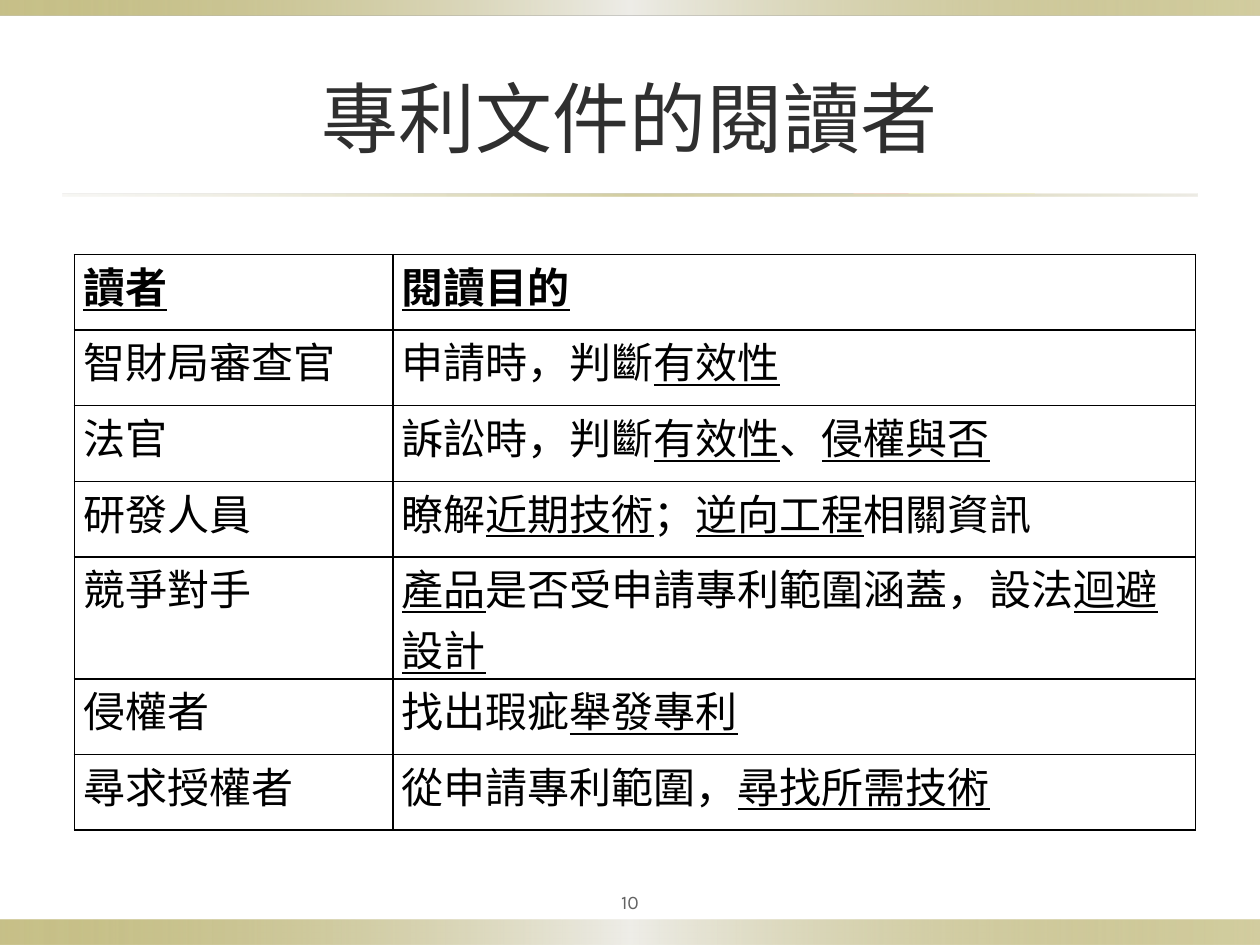
import pptx
import pptx.dml.color
import pptx.enum.shapes
import pptx.enum.text
import pptx.oxml.ns
import pptx.util
from lxml import etree

RGBColor = pptx.dml.color.RGBColor
Inches = pptx.util.Inches
Pt = pptx.util.Pt
qn = pptx.oxml.ns.qn
CENTER = pptx.enum.text.PP_ALIGN.CENTER
MIDDLE = pptx.enum.text.MSO_ANCHOR.MIDDLE

# Content: each cell is a list of pieces; a piece in a tuple is underlined
TITLE = "專利文件的閱讀者"
PAGE_NUMBER = "10"
ROWS = [
    ([("讀者",)], [("閱讀目的",)]),
    (["智財局審查官"], ["申請時，判斷", ("有效性",)]),
    (["法官"], ["訴訟時，判斷", ("有效性",), "、", ("侵權與否",)]),
    (["研發人員"], ["瞭解", ("近期技術",), "；", ("逆向工程",), "相關資訊"]),
    (["競爭對手"], [("產品",), "是否受申請專利範圍涵蓋，設法", ("迴避設計",)]),
    (["侵權者"], ["找出瑕疵", ("舉發專利",)]),
    (["尋求授權者"], ["從申請專利範圍，", ("尋找所需技術",)]),
]

# Look
LATIN_FONT = "Karla"
CJK_FONT = "Noto Sans CJK TC"
BLACK = RGBColor(0x00, 0x00, 0x00)
TITLE_GRAY = RGBColor(0x2F, 0x2F, 0x2F)
NUMBER_GRAY = RGBColor(0x63, 0x63, 0x63)
OLIVE = RGBColor(0x91, 0x84, 0x15)
PALE = RGBColor(0xEE, 0xED, 0xE8)
SAND = RGBColor(0xDC, 0xD9, 0xCC)

# Gradient stops: position, colour, opacity, in percent
BAND = [(0, OLIVE, 50), (50, PALE, 100), (100, OLIVE, 40)]
RULE = [(0, SAND, 20), (50, OLIVE, 40), (100, SAND, 50)]

# Layout in inches
WIDTH, HEIGHT = 10, 7.5
MARGIN = 0.5
BOTTOM_BAND = 0.2
COLUMN_WIDTHS = (2.53, 6.37)
ROW_HEIGHT = 0.6


def add_gradient_bar(slide, left, top, width, height, stops):
    bar = slide.shapes.add_shape(
        pptx.enum.shapes.MSO_SHAPE.RECTANGLE,
        Inches(left), Inches(top), Inches(width), Inches(height))
    bar.shadow.inherit = False
    bar.line.fill.background()
    bar.fill.gradient()
    bar.fill.gradient_angle = 0
    stop_list = bar._element.spPr.find(".//" + qn("a:gsLst"))
    for old_stop in list(stop_list):
        stop_list.remove(old_stop)
    for position, color, opacity in stops:
        stop = etree.SubElement(stop_list, qn("a:gs"), pos=str(position * 1000))
        rgb = etree.SubElement(stop, qn("a:srgbClr"), val=str(color))
        etree.SubElement(rgb, qn("a:alpha"), val=str(opacity * 1000))


def style_paragraph(paragraph, font_name, size, color, bold=False):
    font = paragraph.font
    font.name, font.size, font.bold = font_name, Pt(size), bold
    font.color.rgb = color
    properties = paragraph._p.pPr.find(qn("a:defRPr"))
    etree.SubElement(properties, qn("a:ea"), typeface=CJK_FONT)


def add_borders(cell, color, width):
    properties = cell._tc.get_or_add_tcPr()
    for index, side in enumerate(("a:lnL", "a:lnR", "a:lnT", "a:lnB")):
        line = etree.Element(qn(side), w=str(Pt(width)))
        fill = etree.SubElement(line, qn("a:solidFill"))
        etree.SubElement(fill, qn("a:srgbClr"), val=str(color))
        properties.insert(index, line)


def fill_cell(cell, pieces, bold):
    cell.margin_left = cell.margin_right = Inches(0.07)
    cell.margin_top = cell.margin_bottom = 0
    cell.fill.background()
    add_borders(cell, BLACK, 1)
    paragraph = cell.text_frame.paragraphs[0]
    style_paragraph(paragraph, CJK_FONT, 24, BLACK, bold)
    for piece in pieces:
        run = paragraph.add_run()
        run.text = "".join(piece)
        run.font.underline = isinstance(piece, tuple)


def main():
    presentation = pptx.Presentation()
    presentation.slide_width = Inches(WIDTH)
    presentation.slide_height = Inches(HEIGHT)
    slide = presentation.slides.add_slide(presentation.slide_layouts[5])

    # Bands and rule under the title
    add_gradient_bar(slide, 0, HEIGHT - BOTTOM_BAND, WIDTH, BOTTOM_BAND, BAND)
    add_gradient_bar(slide, 0, 0, WIDTH, 0.12, BAND)
    add_gradient_bar(slide, MARGIN, 1.54, WIDTH - 2 * MARGIN, 0.02, RULE)

    # Title
    title = slide.shapes.title
    title.left, title.top = Inches(MARGIN), Inches(0.3)
    title.width, title.height = Inches(WIDTH - 2 * MARGIN), Inches(1.25)
    title.text_frame.text = TITLE
    title.text_frame.vertical_anchor = MIDDLE
    paragraph = title.text_frame.paragraphs[0]
    paragraph.alignment = CENTER
    style_paragraph(paragraph, LATIN_FONT, 44, TITLE_GRAY)

    # Table of readers and their purposes
    table = slide.shapes.add_table(
        len(ROWS), len(COLUMN_WIDTHS), Inches(0.59), Inches(2.02),
        Inches(sum(COLUMN_WIDTHS)), Inches(ROW_HEIGHT * len(ROWS))).table
    table.first_row = table.horz_banding = False
    for column, width in zip(table.columns, COLUMN_WIDTHS):
        column.width = Inches(width)
    for row_index, row in enumerate(ROWS):
        table.rows[row_index].height = Inches(ROW_HEIGHT)
        for column_index, pieces in enumerate(row):
            fill_cell(table.cell(row_index, column_index), pieces,
                      bold=row_index == 0)

    # Page number
    number = slide.shapes.add_textbox(
        Inches((WIDTH - 1) / 2), Inches(7), Inches(1), Inches(0.31))
    frame = number.text_frame
    frame.word_wrap = True
    frame.vertical_anchor = MIDDLE
    frame.margin_left = frame.margin_right = Inches(0.05)
    frame.margin_top = frame.margin_bottom = Inches(0.05)
    frame.text = PAGE_NUMBER
    frame.paragraphs[0].alignment = CENTER
    style_paragraph(frame.paragraphs[0], LATIN_FONT, 11, NUMBER_GRAY)

    presentation.save("out.pptx")


if __name__ == "__main__":
    main()
